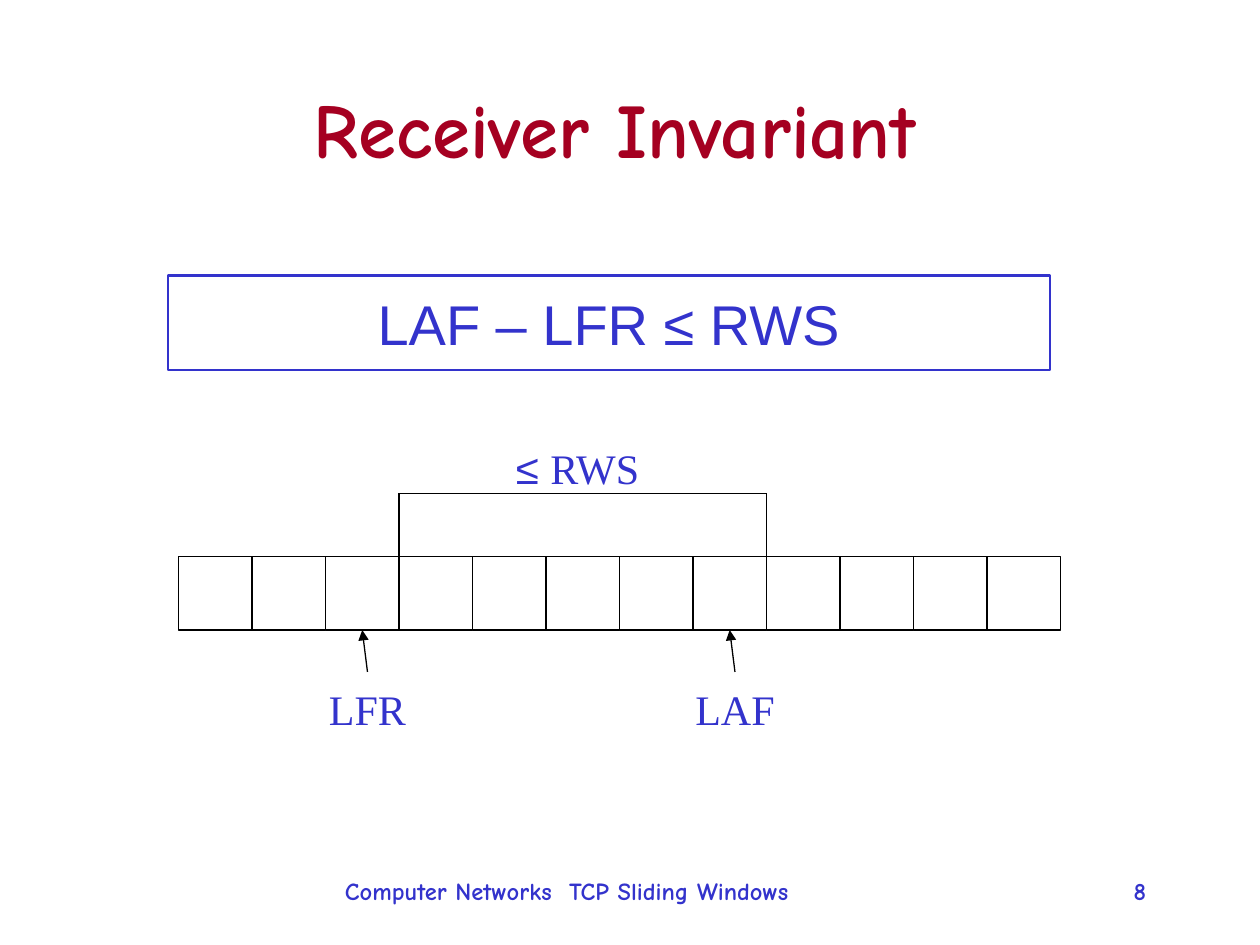
from lxml.etree import SubElement
from pptx import Presentation
from pptx.dml.color import RGBColor
from pptx.enum.shapes import MSO_CONNECTOR as CONNECTOR, MSO_SHAPE as SHAPE
from pptx.enum.text import MSO_ANCHOR as ANCHOR, PP_ALIGN as ALIGN
from pptx.oxml.ns import qn
from pptx.util import Pt

BLUE, RED, BLACK, WHITE = "3333CC", "A50021", "000000", "FFFFFF"
SANS, SERIF, COMIC = "Arial", "Times New Roman", "Comic Neue"


def color(hex_string):
    return RGBColor.from_string(hex_string)


def write(box, *runs, size, ink=BLUE, bold=False, align=ALIGN.CENTER,
          anchor=ANCHOR.TOP, wrap=True, top_inset=3.6):
    """Fill a shape with one paragraph of (text, font name) runs."""
    frame = box.text_frame
    frame.word_wrap = wrap
    frame.vertical_anchor = anchor
    frame.margin_top = Pt(top_inset)
    paragraph = frame.paragraphs[0]
    paragraph.alignment = align
    for text, font_name in runs:
        run = paragraph.add_run()
        run.text = text
        run.font.name = font_name
        run.font.size = Pt(size)
        run.font.bold = bold
        run.font.color.rgb = color(ink)


prs = Presentation()
prs.slide_width, prs.slide_height = Pt(720), Pt(540)
shapes = prs.slides.add_slide(prs.slide_layouts[6]).shapes

# Title and footer
for text, area, style in [
    ("Receiver Invariant", (37.5, 25, 628, 96),
     dict(size=44, ink=RED, anchor=ANCHOR.MIDDLE)),
    ("Computer Networks  TCP Sliding Windows", (190, 497, 380, 28),
     dict(size=14, align=ALIGN.LEFT)),
    ("8", (536, 497, 126, 36), dict(size=14, align=ALIGN.RIGHT)),
]:
    write(shapes.add_textbox(*map(Pt, area)), (text, COMIC), bold=True, **style)

# Invariant
invariant = shapes.add_shape(SHAPE.RECTANGLE, Pt(96), Pt(157.5), Pt(504), Pt(54))
invariant.shadow.inherit = False
invariant.fill.background()
invariant.line.color.rgb = color(BLUE)
invariant.line.width = Pt(1.5)
write(invariant, ("LAF – LFR ≤ RWS", SANS), size=32, top_inset=8)

# Row of frames, then the labels around it
CELL, CELL_COUNT, ROW_LEFT, ROW_TOP = 42, 12, 102, 318
ROW_BOTTOM = ROW_TOP + CELL
LFR_CELL, LAF_CELL = 2, 7
LABEL_WIDTH, LABEL_TOP = 72, 384

boxes = [(ROW_LEFT + i * CELL, ROW_TOP, CELL, BLACK, []) for i in range(CELL_COUNT)]
boxes.append((294, 246, LABEL_WIDTH, WHITE, [("≤ ", SANS), ("RWS", SERIF)]))
pointers = []
for name, cell in [("LFR", LFR_CELL), ("LAF", LAF_CELL)]:
    cell_middle = ROW_LEFT + (cell + 0.5) * CELL
    label_middle = cell_middle + 3
    boxes.append((label_middle - LABEL_WIDTH / 2, LABEL_TOP, LABEL_WIDTH, WHITE,
                  [(name, SERIF)]))
    pointers.append((label_middle, LABEL_TOP, cell_middle, ROW_BOTTOM, True))

for left, top, width, outline, runs in boxes:
    box = shapes.add_shape(SHAPE.RECTANGLE, Pt(left), Pt(top), Pt(width), Pt(CELL))
    box.shadow.inherit = False
    box.fill.solid()
    box.fill.fore_color.rgb = color(WHITE)
    box.line.color.rgb = color(outline)
    box.line.width = Pt(0.75)
    if runs:
        write(box, *runs, size=24, anchor=ANCHOR.MIDDLE, wrap=False)

# Window bracket and pointers
window_left = ROW_LEFT + (LFR_CELL + 1) * CELL
window_right = ROW_LEFT + (LAF_CELL + 1) * CELL
bracket_top = 282
bracket = [
    (window_right, bracket_top, window_right, ROW_TOP, False),
    (window_left, bracket_top, window_left, ROW_TOP, False),
    (window_left, bracket_top, window_right, bracket_top, False),
]
for *ends, has_arrowhead in bracket + pointers:
    connector = shapes.add_connector(CONNECTOR.STRAIGHT, *map(Pt, ends))
    connector.line.color.rgb = color(BLACK)
    connector.line.width = Pt(0.75)
    if has_arrowhead:
        SubElement(connector.line._get_or_add_ln(), qn("a:tailEnd"), type="triangle")
    SubElement(connector._element.spPr, qn("a:effectLst"))

prs.save("out.pptx")
